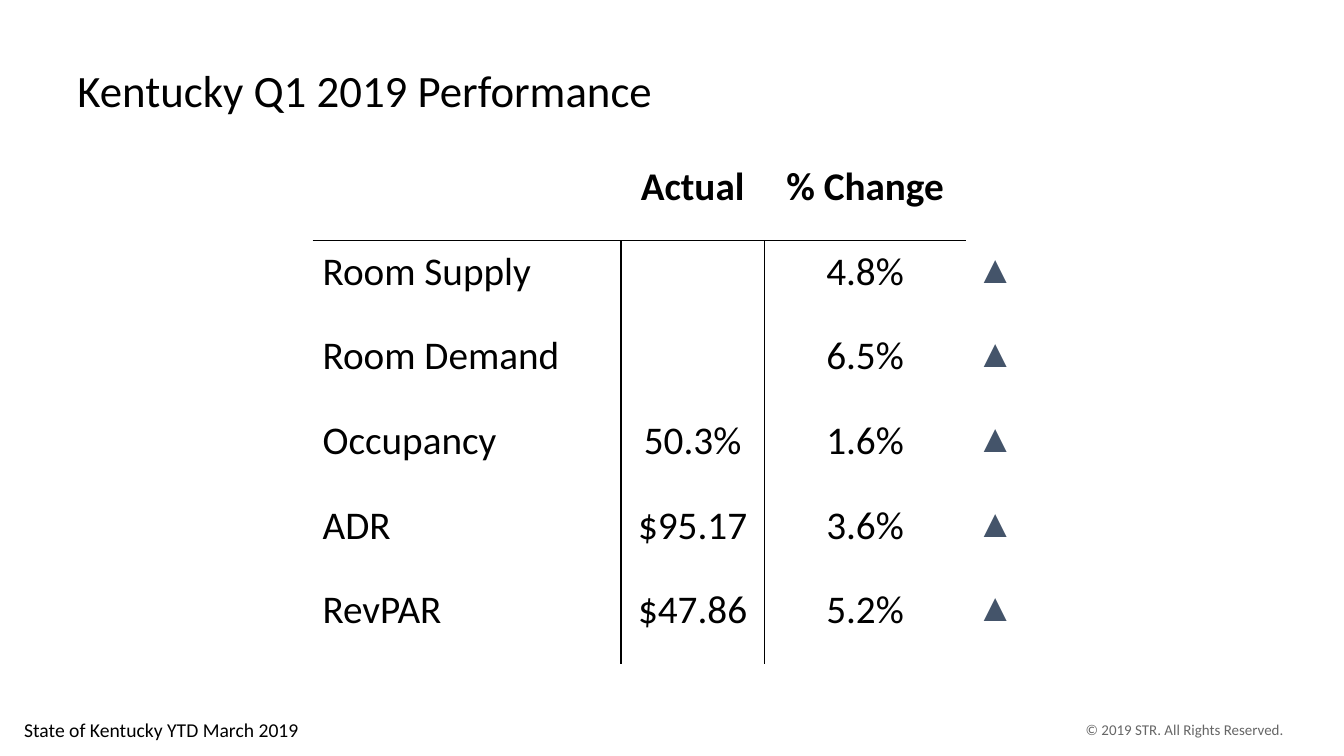
"""Build the Kentucky Q1 2019 hotel performance slide."""
import pptx
import pptx.dml.color
import pptx.enum.text
import pptx.oxml
import pptx.oxml.ns
import pptx.util

Inches = pptx.util.Inches
Pt = pptx.util.Pt
ALIGN = pptx.enum.text.PP_ALIGN
ANCHOR = pptx.enum.text.MSO_ANCHOR


def add_run(tf, text, size, color, align=ALIGN.LEFT, font="Calibri", bold=False):
    p = tf.paragraphs[0]
    p.alignment = align
    r = p.add_run()
    r.text = text
    r.font.size = Pt(size)
    r.font.name = font
    r.font.bold = bold
    r.font.color.rgb = pptx.dml.color.RGBColor.from_string(color)
    return p


def add_border(cell, side, visible):
    paint = '<a:solidFill><a:srgbClr val="000000"/></a:solidFill>' if visible else "<a:noFill/>"
    ln = f'<a:ln{side} {pptx.oxml.ns.nsdecls("a")} w="{Pt(1)}">{paint}</a:ln{side}>'
    cell._tc.get_or_add_tcPr().append(pptx.oxml.parse_xml(ln))


prs = pptx.Presentation()
prs.slide_width = Inches(13.33)
prs.slide_height = Inches(7.5)
s = prs.slides.add_slide(prs.slide_layouts[6])

labels = [
    ("© 2019 STR. All Rights Reserved.", (9.33, 7.1, 3.5, 0.28), 10.7, "666666", ALIGN.RIGHT, ANCHOR.TOP),
    ("Kentucky Q1 2019 Performance", (0.67, 0.3, 12, 1.25), 32, "000000", ALIGN.LEFT, ANCHOR.MIDDLE),
    ("State of Kentucky YTD March 2019", (0.14, 7.07, 7.75, 0.34), 14, "000000", ALIGN.LEFT, ANCHOR.TOP),
]
for text, box, size, color, align, anchor in labels:
    tf = s.shapes.add_textbox(*map(Inches, box)).text_frame
    tf.word_wrap = True
    tf.vertical_anchor = anchor
    p = add_run(tf, text, size, color, align)
    if anchor == ANCHOR.MIDDLE:
        p.line_spacing = 0.9

rows = [
    ("", "Actual", "% Change", ""),
    ("Room Supply", "", "4.8%", "▲"),
    ("Room Demand", "", "6.5%", "▲"),
    ("Occupancy", "50.3%", "1.6%", "▲"),
    ("ADR", "$95.17", "3.6%", "▲"),
    ("RevPAR", "$47.86", "5.2%", "▲"),
]
widths = [3.06, 1.42, 2, 0.66]
frame = s.shapes.add_table(len(rows), len(widths), Inches(3.1), Inches(1.55), Inches(7.14), Inches(5.04))
table = frame.table
table.first_row = False
table.horz_banding = False
for column, width in zip(table.columns, widths):
    column.width = Inches(width)

for i, values in enumerate(rows):
    table.rows[i].height = Inches(0.84)
    for j, value in enumerate(values):
        cell = table.cell(i, j)
        cell.margin_left = cell.margin_right = Inches(0.1)
        cell.margin_top = cell.margin_bottom = Inches(0.07)
        add_border(cell, "L", i > 0 and j in (1, 2))
        add_border(cell, "R", i > 0 and j in (0, 1))
        add_border(cell, "T", i == 1 and j < 3)
        add_border(cell, "B", i == 0 and j < 3)
        cell.fill.background()
        if value:
            arrow = j == 3
            add_run(cell.text_frame, value, 28, "44546A" if arrow else "000000",
                    ALIGN.CENTER if j in (1, 2) else ALIGN.LEFT,
                    "Arial" if arrow else "Calibri", i == 0)

prs.save("out.pptx")
